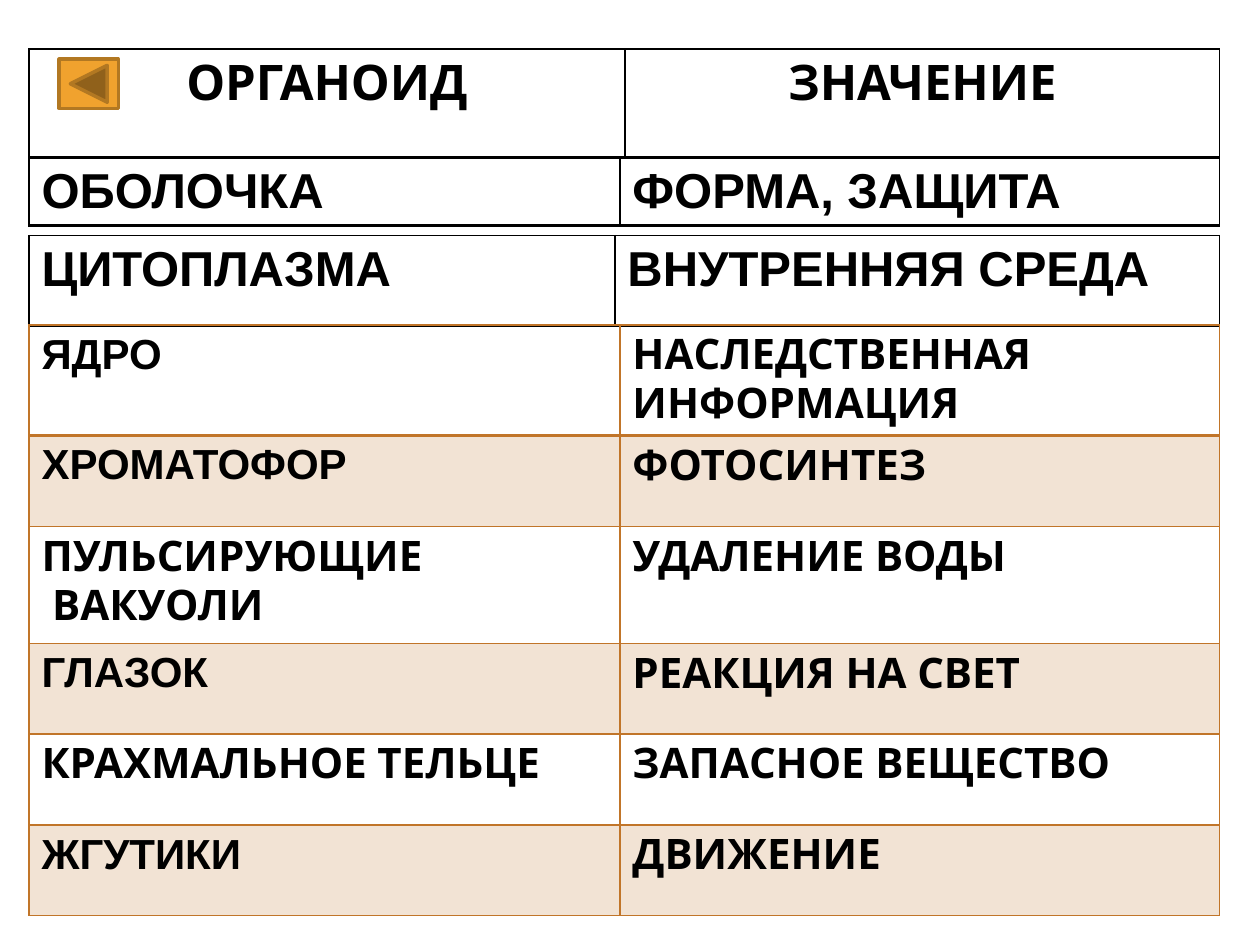
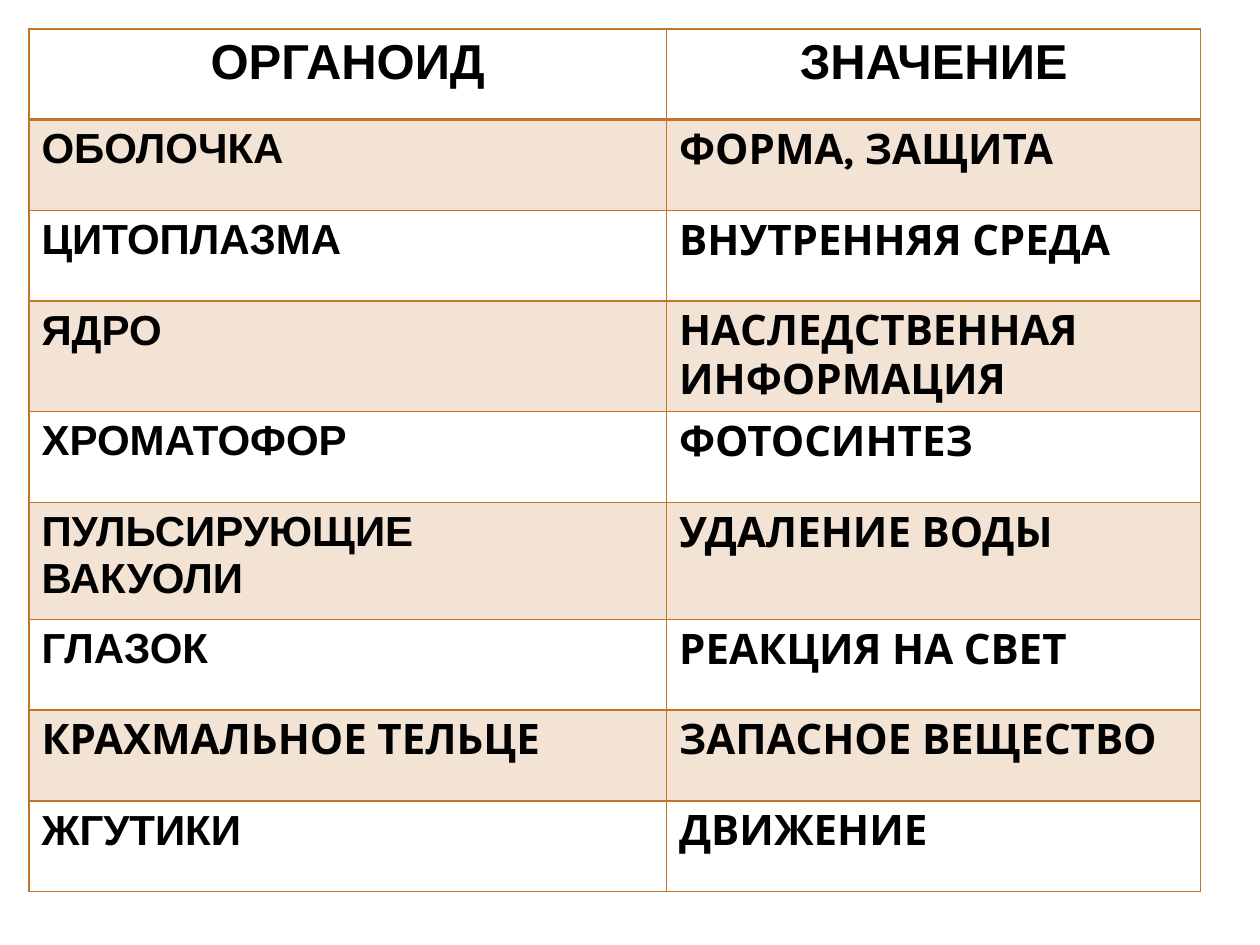
from collections import namedtuple

from lxml.etree import SubElement
from pptx import Presentation
from pptx.dml.color import RGBColor
from pptx.enum.shapes import MSO_SHAPE as SHAPE
from pptx.enum.text import PP_ALIGN as ALIGN
from pptx.oxml.ns import qn
from pptx.util import Inches, Pt

BLACK = RGBColor(0x00, 0x00, 0x00)
COPPER = RGBColor(0xC1, 0x75, 0x29)
AMBER = RGBColor(0xF0, 0xA2, 0x2E)
BRONZE = RGBColor(0xB2, 0x78, 0x22)

PLAIN, DISPLAY = "Arial", "Karla"
MARGIN = 0.23
ROW_HEIGHT, NUCLEUS_HEIGHT, VACUOLE_HEIGHT = 0.72, 0.87, 0.93

Row = namedtuple("Row", "texts fonts size align height")


def large(name, meaning, height, font=PLAIN, align=ALIGN.LEFT):
    return Row((name, meaning), (font, font), 28, align, height)


def organelle(name, meaning, height=ROW_HEIGHT, font=PLAIN):
    return Row((name, meaning), (font, DISPLAY), 24, ALIGN.LEFT, height)


HEADINGS = ("ОРГАНОИД", "ЗНАЧЕНИЕ")
SHELL = ("ОБОЛОЧКА", "ФОРМА, ЗАЩИТА")
CYTOPLASM = ("ЦИТОПЛАЗМА", "ВНУТРЕННЯЯ СРЕДА")


def inner_organelles(vacuoles, vacuole_font):
    return [
        organelle("ЯДРО", "НАСЛЕДСТВЕННАЯ ИНФОРМАЦИЯ", NUCLEUS_HEIGHT),
        organelle("ХРОМАТОФОР", "ФОТОСИНТЕЗ"),
        organelle(vacuoles, "УДАЛЕНИЕ ВОДЫ", VACUOLE_HEIGHT, vacuole_font),
        organelle("ГЛАЗОК", "РЕАКЦИЯ НА СВЕТ"),
        organelle("КРАХМАЛЬНОЕ ТЕЛЬЦЕ", "ЗАПАСНОЕ ВЕЩЕСТВО", font=DISPLAY),
        organelle("ЖГУТИКИ", "ДВИЖЕНИЕ"),
    ]


class Deck:
    """Holds the presentation, its table style and the current slide."""

    def __init__(self):
        self.presentation = Presentation()
        self.presentation.slide_width = Inches(10)
        self.presentation.slide_height = Inches(7.5)
        self.slide = None

    def new_slide(self):
        blank = self.presentation.slide_layouts[6]
        self.slide = self.presentation.slides.add_slide(blank)

    def table(self, top, width, split, rows, ink):
        height = sum(row.height for row in rows)
        grid = self.slide.shapes.add_table(
            len(rows), 2, Inches(MARGIN), Inches(top), Inches(width), Inches(height)
        ).table
        grid.first_row = grid.horz_banding = False
        for column, column_width in zip(grid.columns, (split, width - split)):
            column.width = Inches(column_width)
        for index, row in enumerate(rows):
            grid.rows[index].height = Inches(row.height)
            edges = {"L": 1, "R": 1, "T": 2 if index == 1 else 1, "B": 1 if index else 2}
            for cell, text, font in zip(grid.rows[index].cells, row.texts, row.fonts):
                self.label(cell, text, font, row)
                self.border(cell, edges, ink)
                self.tint(cell, ink, banded=index % 2 == 1)

    def label(self, cell, text, font, row):
        cell.text_frame.text = text
        style = {"name": font, "size": Pt(row.size), "bold": True}
        for paragraph in cell.text_frame.paragraphs:
            paragraph.alignment = row.align
            for run in paragraph.runs:
                for key, value in style.items():
                    setattr(run.font, key, value)
                run.font.color.rgb = BLACK

    def border(self, cell, edges, ink):
        properties = cell._tc.get_or_add_tcPr()
        for side, points in edges.items():
            line = SubElement(properties, qn(f"a:ln{side}"), w=str(Pt(points)))
            SubElement(SubElement(line, qn("a:solidFill")), qn("a:srgbClr"), val=str(ink))

    def tint(self, cell, ink, banded):
        if not banded:
            cell.fill.background()
            return
        cell.fill.solid()
        cell.fill.fore_color.rgb = ink
        color = cell._tc.tcPr.find(qn("a:solidFill")).find(qn("a:srgbClr"))
        SubElement(color, qn("a:alpha"), val="20000")

    def back_button(self, left, top, width, height):
        button = self.slide.shapes.add_shape(
            SHAPE.ACTION_BUTTON_BACK_OR_PREVIOUS,
            Inches(left), Inches(top), Inches(width), Inches(height),
        )
        button.shadow.inherit = False
        button.fill.solid()
        button.fill.fore_color.rgb = AMBER
        button.line.color.rgb = BRONZE
        button.line.width = Pt(2)


def main():
    deck = Deck()

    deck.new_slide()
    headings = large(*HEADINGS, 0.86, DISPLAY, ALIGN.CENTER)
    deck.table(0.39, 9.45, 4.73, [headings], BLACK)
    deck.table(1.25, 9.45, 4.69, [large(*SHELL, 0.54)], BLACK)
    deck.table(1.87, 9.45, 4.65, [large(*CYTOPLASM, 0.71)], BLACK)
    organelles = inner_organelles("ПУЛЬСИРУЮЩИЕ\n ВАКУОЛИ", DISPLAY)
    deck.table(2.58, 9.45, 4.69, organelles, COPPER)
    deck.back_button(0.47, 0.47, 0.47, 0.39)

    deck.new_slide()
    headings = large(*HEADINGS, ROW_HEIGHT, align=ALIGN.CENTER)
    outer = [organelle(*SHELL), organelle(*CYTOPLASM)]
    organelles = inner_organelles("ПУЛЬСИРУЮЩИЕ\nВАКУОЛИ", PLAIN)
    deck.table(0.23, 9.3, 5.06, [headings] + outer + organelles, COPPER)

    deck.presentation.save("out.pptx")


if __name__ == "__main__":
    main()
